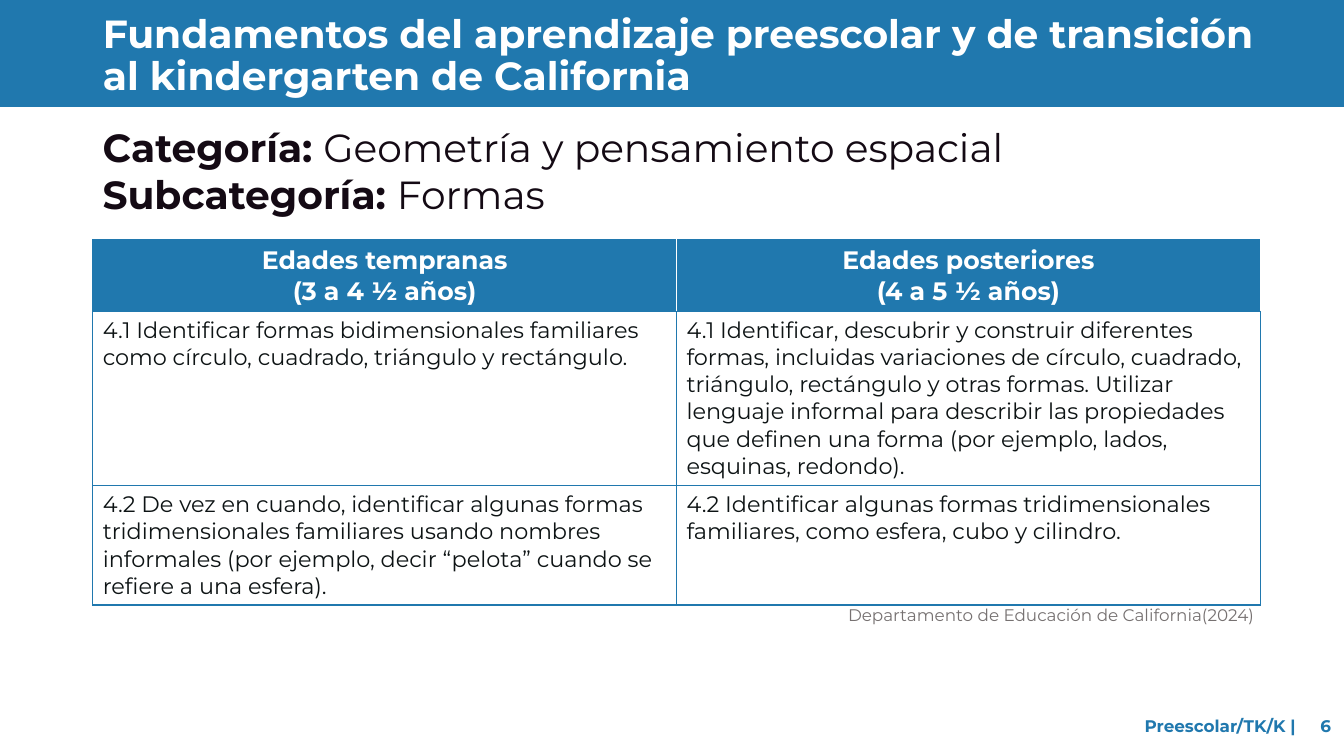
from dataclasses import dataclass

import lxml.etree
import pptx
import pptx.dml.color
import pptx.enum.shapes
import pptx.enum.text
import pptx.oxml.ns
import pptx.util

Inches = pptx.util.Inches
ALIGN = pptx.enum.text.PP_ALIGN
ANCHOR = pptx.enum.text.MSO_ANCHOR

COLORS = {
    "blue": "2078AE",
    "white": "FFFFFF",
    "heading": "140A14",
    "body": "0D1314",
    "gray": "767171",
}


@dataclass
class Run:
    text: str
    size: int
    color: str
    bold: bool = False


@dataclass
class TextBox:
    left: float
    top: float
    width: float
    height: float
    paragraphs: list[list[Run]]
    align: ALIGN = ALIGN.LEFT
    anchor: ANCHOR = ANCHOR.TOP


def rgb(color: str) -> pptx.dml.color.RGBColor:
    return pptx.dml.color.RGBColor.from_string(COLORS[color])


def set_attributes(target, values: dict) -> None:
    for name, value in values.items():
        setattr(target, name, value)


def place(shape, left: float, top: float, width: float, height: float) -> None:
    set_attributes(shape, {
        "left": Inches(left),
        "top": Inches(top),
        "width": Inches(width),
        "height": Inches(height),
    })


def write_text(text_frame, paragraphs: list[list[Run]], align: ALIGN) -> None:
    for index, runs in enumerate(paragraphs):
        paragraph = text_frame.add_paragraph() if index else text_frame.paragraphs[0]
        paragraph.alignment = align
        for item in runs:
            run = paragraph.add_run()
            run.text = item.text
            set_attributes(run.font, {
                "name": "Montserrat",
                "size": pptx.util.Pt(item.size),
                "bold": item.bold,
            })
            run.font.color.rgb = rgb(item.color)


def fill_box(shape, box: TextBox) -> None:
    place(shape, box.left, box.top, box.width, box.height)
    set_attributes(shape.text_frame, {
        "word_wrap": True,
        "auto_size": pptx.enum.text.MSO_AUTO_SIZE.NONE,
        "vertical_anchor": box.anchor,
    })
    write_text(shape.text_frame, box.paragraphs, box.align)


def set_borders(cell, colors: dict[str, str]) -> None:
    properties = cell._tc.get_or_add_tcPr()
    for side, color in colors.items():
        line = lxml.etree.SubElement(properties, pptx.oxml.ns.qn(f"a:ln{side}"), w="12700")
        solid = lxml.etree.SubElement(line, pptx.oxml.ns.qn("a:solidFill"))
        lxml.etree.SubElement(solid, pptx.oxml.ns.qn("a:srgbClr"), val=COLORS[color])


def add_header_band(slide) -> None:
    band = slide.shapes.add_shape(pptx.enum.shapes.MSO_SHAPE.RECTANGLE, 0, 0, Inches(13.33), Inches(1.06))
    band.shadow.inherit = False
    band.fill.solid()
    band.fill.fore_color.rgb = rgb("blue")
    band.line.fill.background()
    slide.shapes.title._element.addprevious(band._element)


def add_age_table(slide, rows: list[list[list[str]]], heights: list[float]) -> None:
    frame = slide.shapes.add_table(
        len(rows), len(rows[0]), Inches(0.92), Inches(2.38), Inches(11.58), Inches(sum(heights))
    )
    table = frame.table
    table.horz_banding = False
    for column in table.columns:
        column.width = Inches(5.79)
    for row_index, (row, height) in enumerate(zip(rows, heights)):
        table.rows[row_index].height = Inches(height)
        header = row_index == 0
        for column_index, lines in enumerate(row):
            cell = table.cell(row_index, column_index)
            borders = dict.fromkeys("LRTB", "blue")
            if header:
                borders["R"] = "white"
                if column_index:
                    borders["L"] = "white"
            set_borders(cell, borders)
            cell.fill.solid()
            cell.fill.fore_color.rgb = rgb("blue" if header else "white")
            size, color = (18, "white") if header else (16, "body")
            paragraphs = [[Run(line, size, color, header)] for line in lines]
            write_text(cell.text_frame, paragraphs, ALIGN.CENTER if header else ALIGN.LEFT)


TITLE = TextBox(0.92, 0.09, 11.85, 0.95, [[
    Run("Fundamentos del aprendizaje preescolar y de transición al kindergarten de California", 28, "white", True),
]])

TEXT_BOXES = [
    TextBox(0.92, 1.17, 11.67, 1.15, [
        [Run("Categoría: ", 28, "heading", True), Run("Geometría y pensamiento espacial", 28, "heading")],
        [Run("Subcategoría: ", 28, "heading", True), Run("Formas", 28, "heading")],
    ]),
    TextBox(0.87, 5.95, 11.67, 0.3, [
        [Run("Departamento de Educación de California(2024)", 12, "gray")],
    ], ALIGN.RIGHT),
    TextBox(9.49, 7, 3.46, 0.4, [[Run("Preescolar/TK/K |", 12, "blue", True)]], ALIGN.RIGHT, ANCHOR.MIDDLE),
    TextBox(12.9, 7, 0.4, 0.4, [[Run("6", 12, "blue", True)]], ALIGN.RIGHT, ANCHOR.MIDDLE),
]

AGE_ROWS = [
    [["Edades tempranas", "(3 a 4 ½ años)"], ["Edades posteriores", "(4 a 5 ½ años)"]],
    [
        ["4.1 Identificar formas bidimensionales familiares como círculo, cuadrado, triángulo y rectángulo."],
        ["4.1 Identificar, descubrir y construir diferentes formas, incluidas variaciones de círculo, "
         "cuadrado, triángulo, rectángulo y otras formas. Utilizar lenguaje informal para describir las "
         "propiedades que definen una forma (por ejemplo, lados, esquinas, redondo)."],
    ],
    [
        ["4.2 De vez en cuando, identificar algunas formas tridimensionales familiares usando nombres "
         "informales (por ejemplo, decir “pelota” cuando se refiere a una esfera)."],
        ["4.2 Identificar algunas formas tridimensionales familiares, como esfera, cubo y cilindro."],
    ],
]


def main() -> None:
    presentation = pptx.Presentation()
    presentation.slide_width = Inches(13.33)
    presentation.slide_height = Inches(7.5)
    slide = presentation.slides.add_slide(presentation.slide_layouts[5])
    add_header_band(slide)
    fill_box(slide.shapes.title, TITLE)
    slide.shapes.title.text_frame.paragraphs[0].line_spacing = 0.9
    add_age_table(slide, AGE_ROWS, [0.71, 1.73, 1.18])
    for box in TEXT_BOXES:
        fill_box(slide.shapes.add_textbox(0, 0, 0, 0), box)
    presentation.save("out.pptx")


if __name__ == "__main__":
    main()
